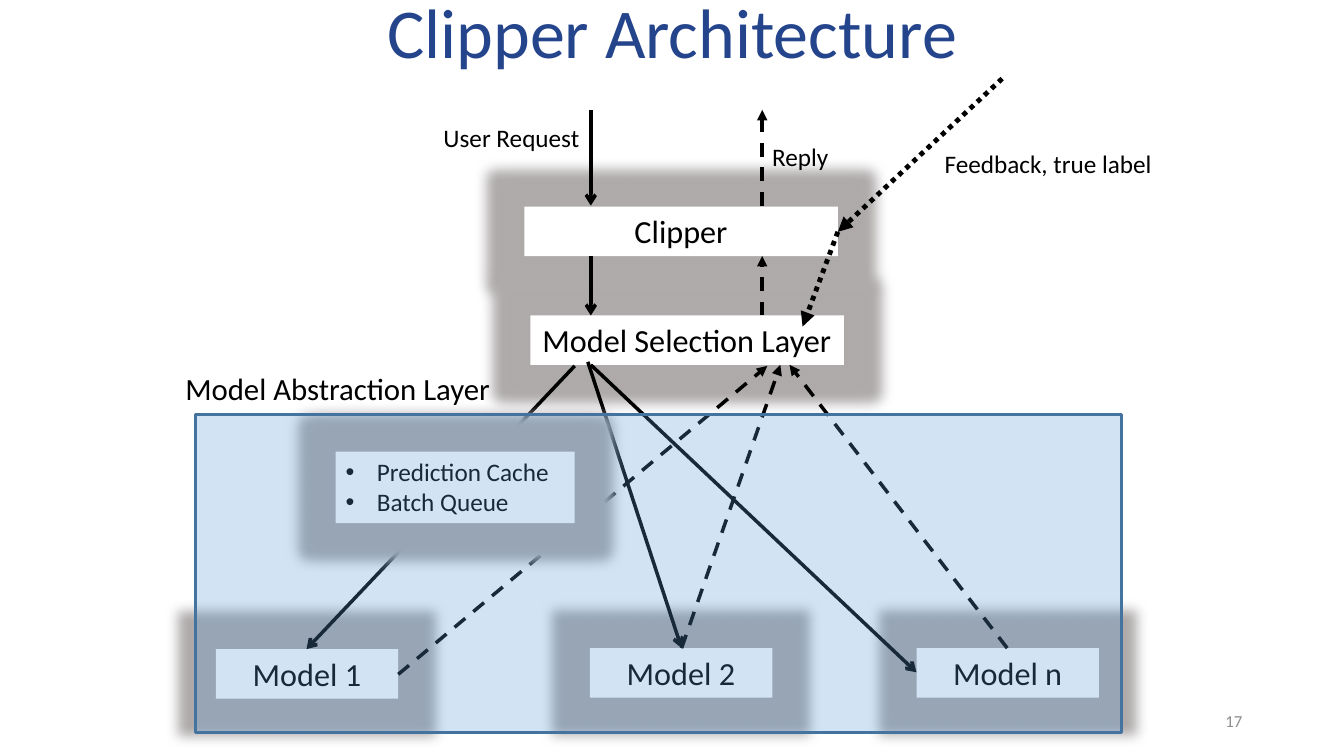
from dataclasses import dataclass

from lxml.etree import SubElement
from pptx import Presentation
from pptx.dml.color import RGBColor
from pptx.enum.dml import MSO_LINE
from pptx.enum.shapes import MSO_CONNECTOR, MSO_SHAPE
from pptx.enum.text import MSO_ANCHOR, PP_ALIGN
from pptx.oxml.ns import qn
from pptx.slide import Slide
from pptx.text.text import TextFrame
from pptx.util import Inches, Pt

FONT = "Calibri"
BLACK = RGBColor(0x00, 0x00, 0x00)
WHITE = RGBColor(0xFF, 0xFF, 0xFF)
TITLE_BLUE = RGBColor(0x24, 0x44, 0x8C)
LAYER_BLUE = RGBColor(0x5B, 0x9B, 0xD5)
LAYER_EDGE = RGBColor(0x43, 0x73, 0x9E)
GLOW_GREY = RGBColor(0xAF, 0xAB, 0xAB)
NUMBER_GREY = RGBColor(0x8C, 0x8C, 0x8C)

GLOW_RADIUS = 0.25
BULLET_INDENT = 0.31
LAYER_OPACITY = 27


@dataclass
class Box:
    """White box with a grey glow."""
    lines: list[str]
    left: float
    top: float
    width: float
    height: float = 0.49
    size: float = 23
    bulleted: bool = False


@dataclass
class Label:
    text: str
    left: float
    top: float
    width: float
    height: float = 0.4
    size: float = 18
    align: PP_ALIGN = PP_ALIGN.LEFT
    color: RGBColor = BLACK
    wrap: bool = False
    anchor: MSO_ANCHOR = MSO_ANCHOR.TOP


@dataclass
class Arrow:
    """Arrow pointing from start to end."""
    start: tuple[float, float]
    end: tuple[float, float]
    dash: MSO_LINE | None = None
    width: float = 2.5


def request(start: tuple[float, float], end: tuple[float, float]) -> Arrow:
    return Arrow(start, end)


def reply(start: tuple[float, float], end: tuple[float, float]) -> Arrow:
    return Arrow(start, end, MSO_LINE.DASH)


def feedback(start: tuple[float, float], end: tuple[float, float]) -> Arrow:
    return Arrow(start, end, MSO_LINE.ROUND_DOT, 3.5)


# Columns of the vertical arrows, and the tops of the models
REQUEST_X, REPLY_X = 5.86, 7.56
MODEL_TOP, MODEL_WIDTH = 6.43, 1.81
CLIPPER_CORNER = (8.31, 2.3)
MODEL_2_TOP = (6.76, MODEL_TOP)

# Parts from back to front
PARTS: list[Box | Label | Arrow] = [
    Box(["Clipper"], 5.2, 2.05, 3.11),
    Box(["Model 1"], 2.14, 6.44, MODEL_WIDTH),
    Box(["Model 2"], 5.85, MODEL_TOP, MODEL_WIDTH),
    Box(["Model n"], 9.09, MODEL_TOP, MODEL_WIDTH),
    request((REQUEST_X, 1.09), (REQUEST_X, 2.04)),
    Label("User Request", 4.3, 1.16, 1.61, wrap=True),
    Box(["Model Selection Layer"], 5.26, 3.13, 3.11),
    request((5.7, 3.63), (3.04, 6.44)),
    request((5.83, 3.59), MODEL_2_TOP),
    reply((REPLY_X, 2.04), (REPLY_X, 1.09)),
    Label("Reply", REPLY_X, 1.35, 0.77),
    request((REQUEST_X, 2.54), (REQUEST_X, 3.13)),
    reply((3.95, 6.69), (7.61, 3.63)),
    reply(MODEL_2_TOP, (7.74, 3.62)),
    reply((REPLY_X, 3.13), (REPLY_X, 2.54)),
    request((REQUEST_X, 3.62), (9.09, 6.67)),
    reply((9.99, MODEL_TOP), (7.83, 3.62)),
    feedback((9.94, 0.78), CLIPPER_CORNER),
    Label("Feedback, true label", 9.27, 1.42, 2.28),
    Box(["Prediction Cache", "Batch Queue"], 3.33, 4.48, 2.37, 0.71, 18, bulleted=True),
    feedback(CLIPPER_CORNER, (7.96, 3.24)),
    Label("Model Abstraction Layer", 1.72, 3.62, 3.26, 0.47, 22, PP_ALIGN.CENTER),
]


def write_lines(frame: TextFrame, lines: list[str], size: float,
                color: RGBColor, align: PP_ALIGN) -> None:
    for index, text in enumerate(lines):
        para = frame.add_paragraph() if index else frame.paragraphs[0]
        para.alignment = align
        span = para.add_run()
        span.text = text
        span.font.name = FONT
        span.font.size = Pt(size)
        span.font.color.rgb = color


def draw_box(page: Slide, box: Box) -> None:
    shape = page.shapes.add_shape(MSO_SHAPE.RECTANGLE, Inches(box.left), Inches(box.top),
                                  Inches(box.width), Inches(box.height))
    shape.fill.solid()
    shape.fill.fore_color.rgb = WHITE
    shape.line.fill.background()
    shape.shadow.inherit = False
    effects = shape.element.spPr.find(qn("a:effectLst"))
    glow = SubElement(effects, qn("a:glow"), rad=str(Inches(GLOW_RADIUS)))
    SubElement(glow, qn("a:srgbClr"), val=str(GLOW_GREY))

    frame = shape.text_frame
    frame.word_wrap = True
    frame.vertical_anchor = MSO_ANCHOR.TOP
    align = PP_ALIGN.LEFT if box.bulleted else PP_ALIGN.CENTER
    write_lines(frame, box.lines, box.size, BLACK, align)
    if box.bulleted:
        indent = Inches(BULLET_INDENT)
        for para in frame.paragraphs:
            properties = para._p.get_or_add_pPr()
            properties.set("marL", str(indent))
            properties.set("indent", str(-indent))
            SubElement(properties, qn("a:buFont"), typeface="Arial")
            SubElement(properties, qn("a:buChar"), char="•")


def draw_label(page: Slide, label: Label) -> None:
    shape = page.shapes.add_textbox(Inches(label.left), Inches(label.top),
                                    Inches(label.width), Inches(label.height))
    frame = shape.text_frame
    frame.word_wrap = label.wrap
    frame.vertical_anchor = label.anchor
    write_lines(frame, [label.text], label.size, label.color, label.align)


def draw_arrow(page: Slide, arrow: Arrow) -> None:
    points = [Inches(value) for value in (*arrow.start, *arrow.end)]
    connector = page.shapes.add_connector(MSO_CONNECTOR.STRAIGHT, *points)
    connector.line.color.rgb = BLACK
    connector.line.width = Pt(arrow.width)
    if arrow.dash is not None:
        connector.line.dash_style = arrow.dash
    head = "arrow" if arrow.dash is None else "triangle"
    SubElement(connector.line._get_or_add_ln(), qn("a:tailEnd"), type=head)
    SubElement(connector.element.spPr, qn("a:effectLst"))


def draw_title(page: Slide) -> None:
    title = page.shapes.title
    title.left, title.top = Inches(1.67), Inches(-0.26)
    title.width, title.height = Inches(10), Inches(1.04)
    frame = title.text_frame
    frame.vertical_anchor = MSO_ANCHOR.BOTTOM
    write_lines(frame, ["Clipper Architecture"], 50, TITLE_BLUE, PP_ALIGN.CENTER)
    frame.paragraphs[0].line_spacing = 0.9


def draw_abstraction_layer(page: Slide) -> None:
    layer = page.shapes.add_shape(MSO_SHAPE.RECTANGLE, Inches(1.94), Inches(4.11),
                                  Inches(9.18), Inches(3.16))
    layer.shadow.inherit = False
    layer.fill.solid()
    layer.fill.fore_color.rgb = LAYER_BLUE
    color = layer.element.spPr.find(qn("a:solidFill")).find(qn("a:srgbClr"))
    SubElement(color, qn("a:alpha"), val=str(LAYER_OPACITY * 1000))
    layer.line.color.rgb = LAYER_EDGE
    layer.line.width = Pt(2)


def main() -> None:
    deck = Presentation()
    deck.slide_width, deck.slide_height = Inches(13.33), Inches(7.5)
    page = deck.slides.add_slide(deck.slide_layouts[5])
    draw_title(page)

    painters = {Box: draw_box, Label: draw_label, Arrow: draw_arrow}
    for part in PARTS:
        painters[type(part)](page, part)

    # Translucent layer over the diagram, then the slide number
    draw_abstraction_layer(page)
    draw_label(page, Label("17", 9.42, 6.95, 3, size=12, align=PP_ALIGN.RIGHT,
                           color=NUMBER_GREY, wrap=True, anchor=MSO_ANCHOR.MIDDLE))
    deck.save("out.pptx")


if __name__ == "__main__":
    main()
